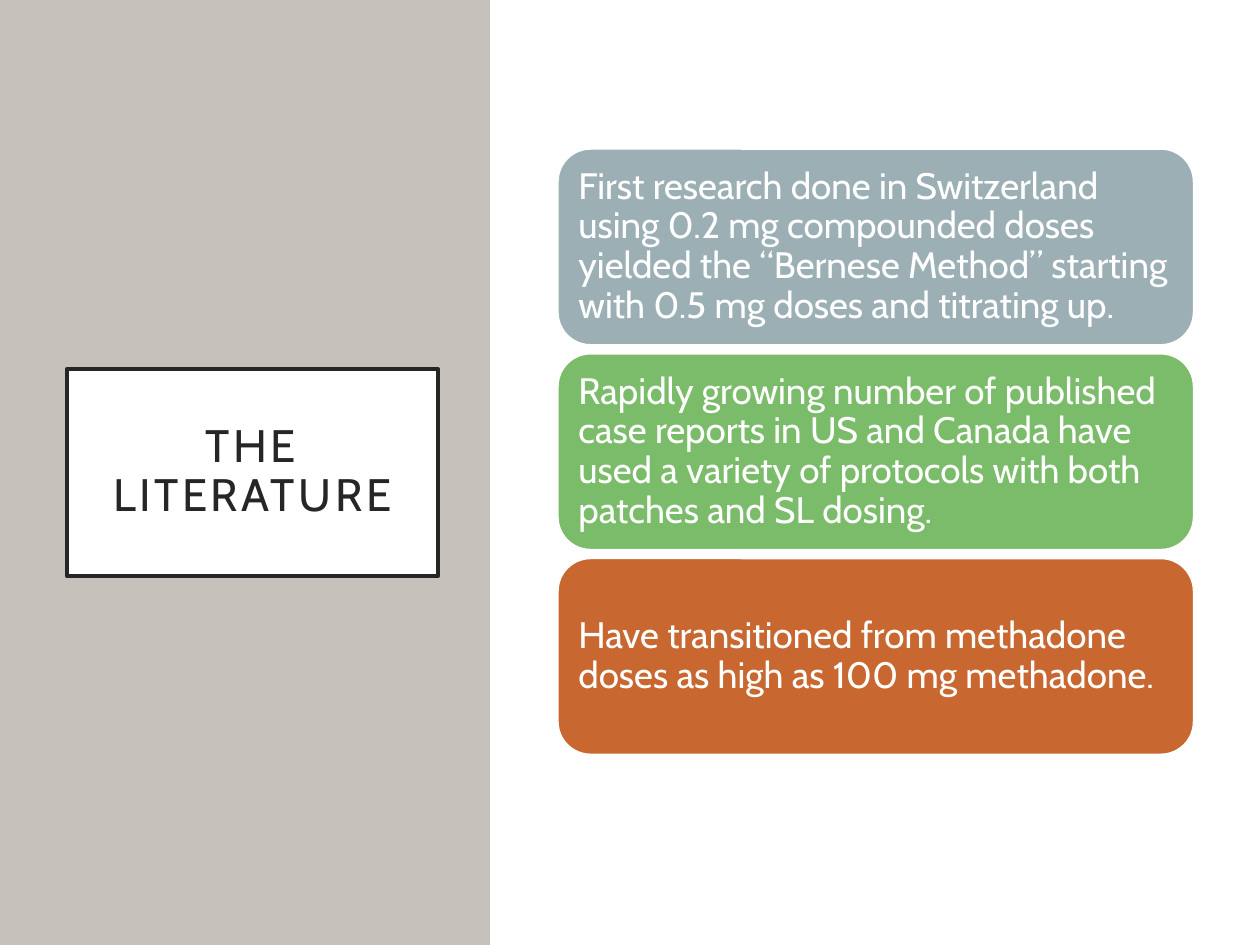
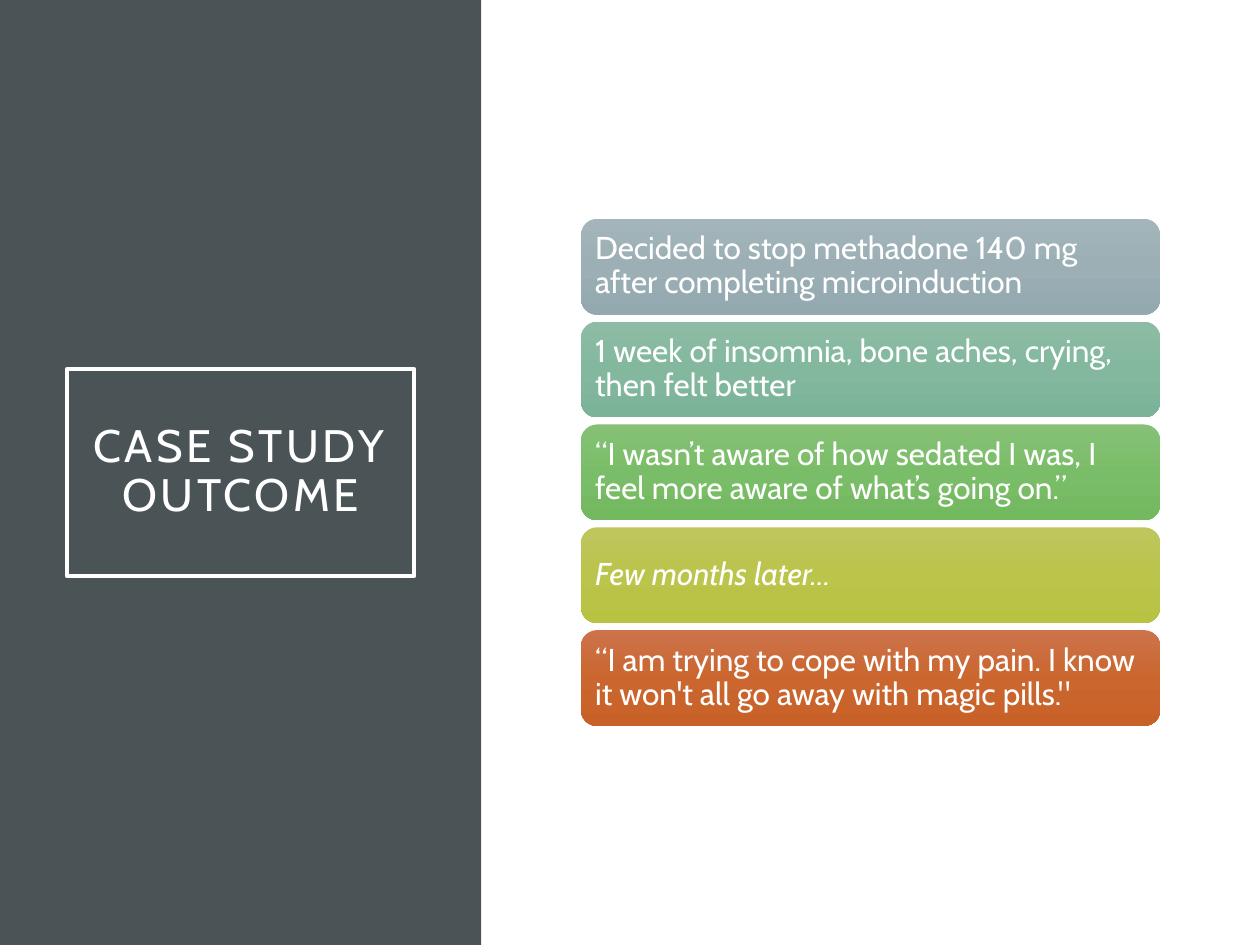
import copy

import pptx
import pptx.util
import pptx.dml.color
import pptx.enum.shapes
import pptx.enum.text

Pt = pptx.util.Pt
RGBColor = pptx.dml.color.RGBColor
Shape = pptx.enum.shapes.MSO_SHAPE

FONT = "Cabin"
WIDTH, HEIGHT = 720, 540

# Colours
WHITE = RGBColor(0xFF, 0xFF, 0xFF)
INK = RGBColor(0x26, 0x26, 0x26)
STONE = RGBColor(0xC6, 0xC1, 0xBA)
SLATE = RGBColor(0x4A, 0x53, 0x56)
BLUE_GREY = RGBColor(0x9B, 0xAF, 0xB5)
GREEN = RGBColor(0x7A, 0xBC, 0x69)
ORANGE = RGBColor(0xC9, 0x67, 0x31)

# Gradients: top, middle, bottom
BLUE_GREY_FADE = (RGBColor(0xA3, 0xB5, 0xBB), BLUE_GREY, RGBColor(0x93, 0xA9, 0xAF))
TEAL_FADE = (RGBColor(0x8D, 0xBC, 0xA5), RGBColor(0x83, 0xB8, 0x9E), RGBColor(0x7B, 0xB3, 0x98))
GREEN_FADE = (RGBColor(0x85, 0xC0, 0x76), RGBColor(0x7A, 0xBD, 0x68), RGBColor(0x73, 0xB9, 0x60))
LIME_FADE = (RGBColor(0xBE, 0xC6, 0x5E), RGBColor(0xBB, 0xC4, 0x4B), RGBColor(0xB8, 0xC2, 0x43))
ORANGE_FADE = (RGBColor(0xCC, 0x73, 0x4B), RGBColor(0xCB, 0x66, 0x2F), RGBColor(0xC8, 0x61, 0x28))


class SlideBuilder:
    """Holds the deck, its shared style and the current page."""

    def __init__(self):
        self.deck = pptx.Presentation()
        self.deck.slide_width, self.deck.slide_height = Pt(WIDTH), Pt(HEIGHT)
        self.page = None

    def start_page(self):
        self.page = self.deck.slides.add_slide(self.deck.slide_layouts[5])

    def box(self, kind, left, top, width, height):
        shape = self.page.shapes.add_shape(kind, Pt(left), Pt(top), Pt(width), Pt(height))
        shape.shadow.inherit = False
        shape.line.fill.background()
        return shape

    def panel(self, left, width, color):
        """Full-height band, sent behind the title."""
        panel = self.box(Shape.RECTANGLE, left, 0, width, HEIGHT)
        panel.fill.solid()
        panel.fill.fore_color.rgb = color
        self.page.shapes._spTree.insert(2, panel._element)

    def text(self, shape, words, size, color, inset, align, italic=False):
        frame = shape.text_frame
        frame.word_wrap = True
        frame.auto_size = pptx.enum.text.MSO_AUTO_SIZE.NONE
        frame.vertical_anchor = pptx.enum.text.MSO_ANCHOR.MIDDLE
        frame.margin_left = frame.margin_right = Pt(inset)
        frame.margin_top = frame.margin_bottom = Pt(inset)
        para = frame.paragraphs[0]
        para.alignment = align
        para.line_spacing = 0.9
        span = para.add_run()
        span.text = words
        span.font.name = FONT
        span.font.size = Pt(size)
        span.font.color.rgb = color
        if italic:
            span.font.italic = True
        return span

    def title(self, words, width, color, fill=None):
        title = self.page.shapes.title
        title.left, title.top = Pt(38.2), Pt(211)
        title.width, title.height = Pt(width), Pt(118.1)
        if fill is None:
            title.fill.background()
        else:
            title.fill.solid()
            title.fill.fore_color.rgb = fill
        title.line.color.rgb = color
        title.line.width = Pt(2.5)
        span = self.text(title, words, 26, color, 14.4, pptx.enum.text.PP_ALIGN.CENTER)
        span.font._element.set("spc", "200")  # letter spacing of 2 pt

    def fade(self, shape, colors):
        """Three-stop gradient running from top to bottom."""
        shape.fill.gradient()
        shape.fill.gradient_angle = 270
        first = shape.fill.gradient_stops[0]._gs
        first.addnext(copy.deepcopy(first))
        for stop, color, position in zip(shape.fill.gradient_stops, colors, (0, 0.5, 1)):
            stop.color.rgb = color
            stop.position = position

    def card(self, left, top, width, height, words, size, inset, fill, italic=False):
        card = self.box(Shape.ROUNDED_RECTANGLE, left, top, width, height)
        if isinstance(fill, RGBColor):
            card.fill.solid()
            card.fill.fore_color.rgb = fill
            card.line.color.rgb = WHITE
            card.line.width = Pt(1)
        else:
            self.fade(card, fill)
        self.text(card, words, size, WHITE, inset, pptx.enum.text.PP_ALIGN.LEFT, italic)

    def card_stack(self, cards, left, top, width, height, pitch, size, inset):
        for row, (fill, words, *italic) in enumerate(cards):
            self.card(left, top + row * pitch, width, height, words, size, inset, fill, *italic)


def main():
    builder = SlideBuilder()

    # Literature
    builder.start_page()
    builder.panel(280.5, 439.5, WHITE)
    builder.panel(0, 280, STONE)
    builder.title("THE LITERATURE", 212.1, INK, WHITE)
    literature = [
        (BLUE_GREY, "First research done in Switzerland using 0.2 mg compounded doses "
                    "yielded the “Bernese Method” starting with 0.5 mg doses and titrating up."),
        (GREEN, "Rapidly growing number of published case reports in US and Canada "
                "have used a variety of protocols with both patches and SL dosing."),
        (ORANGE, "Have transitioned from methadone doses as high as 100 mg methadone."),
    ]
    builder.card_stack(literature, left=318.8, top=85.1, width=363.3, height=112,
                       pitch=117, size=21, inset=6.3)

    # Case study outcome
    builder.start_page()
    builder.panel(0, 275, SLATE)
    builder.title("CASE STUDY OUTCOME", 198.5, WHITE)
    outcome = [
        (BLUE_GREY_FADE, "Decided to stop methadone 140 mg after completing microinduction"),
        (TEAL_FADE, "1 week of insomnia, bone aches, crying, then felt better"),
        (GREEN_FADE, "“I wasn’t aware of how sedated I was, I feel more aware of what’s going on.”"),
        (LIME_FADE, "Few months later…", True),
        (ORANGE_FADE, "“I am trying to cope with my pain. I know it won't all go away "
                      "with magic pills.\""),
    ]
    builder.card_stack(outcome, left=332, top=125.1, width=331, height=54.7,
                       pitch=58.75, size=18, inset=5.4)

    builder.deck.save("out.pptx")


if __name__ == "__main__":
    main()
